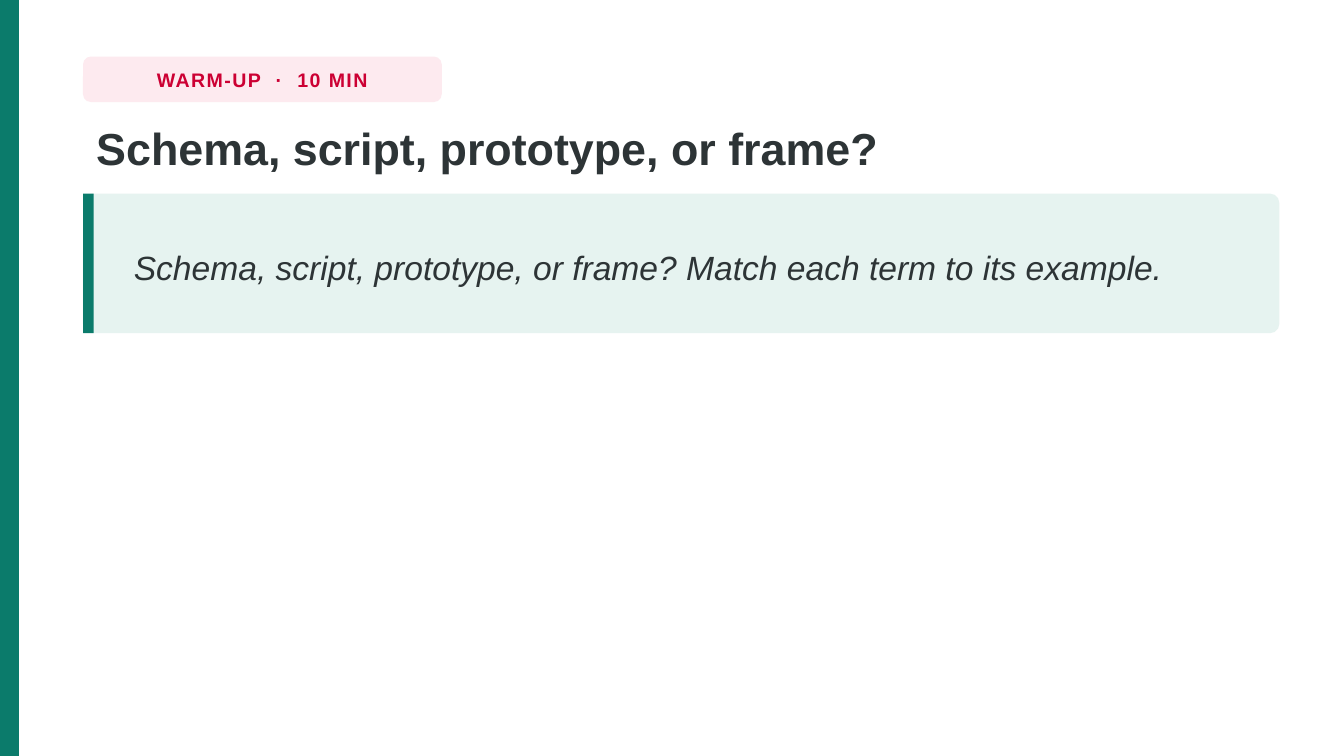
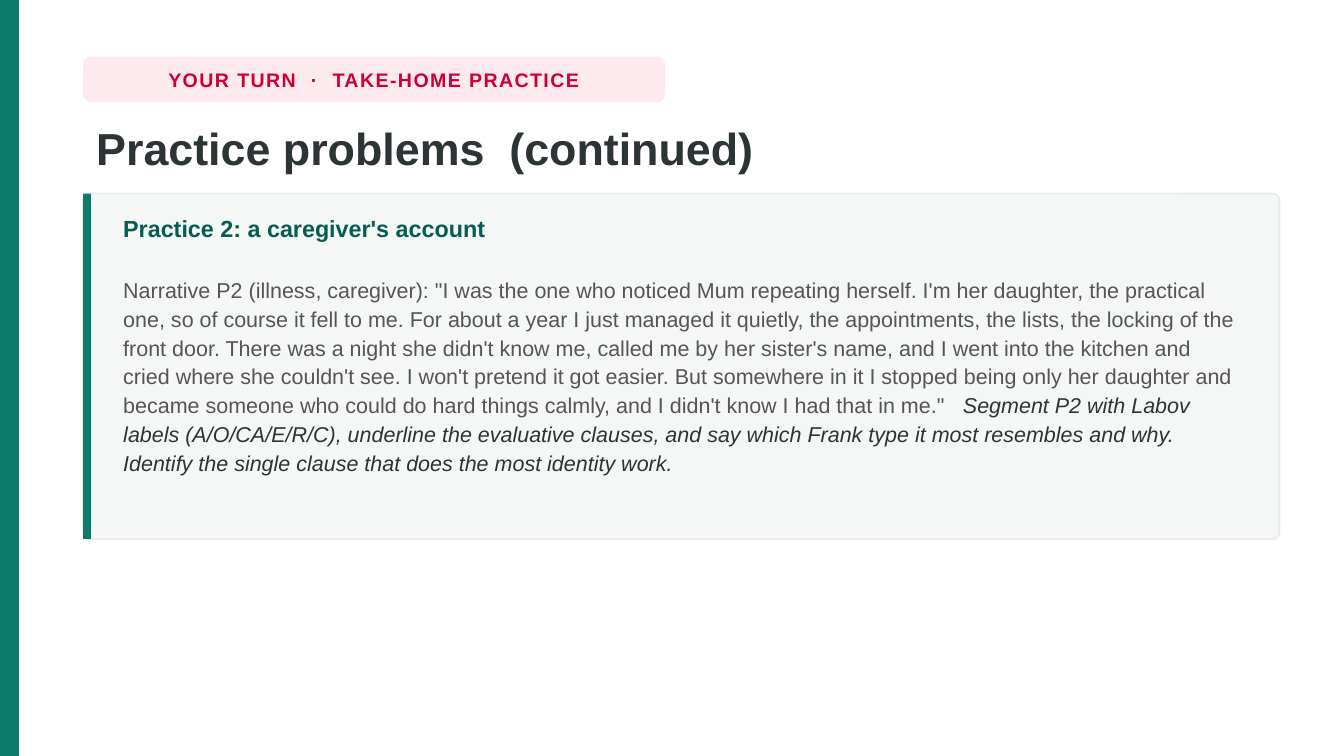
from dataclasses import dataclass

from pptx import Presentation
from pptx import util as u
from pptx.dml import color
from pptx.enum import shapes, text

FONT = "Arial"
GREEN, DARK_GREEN, MINT = "0B7B6B", "065C50", "E6F3F0"
RED, PINK = "CC0033", "FDEAEF"
INK, GREY, CARD, CARD_EDGE = "2D3436", "555555", "F4F7F6", "E8ECEE"
WIDTH, HEIGHT = 25.4, 14.29
LEFT, CONTENT_WIDTH, PANEL_TOP = 1.57, 22.61, 3.66


@dataclass
class Box:
    """A rectangle in centimetres."""
    left: float
    top: float
    width: float
    height: float

    def lengths(self):
        """Return the four sides as slide lengths."""
        return [u.Cm(side) for side in (self.left, self.top, self.width, self.height)]

    def inset(self, left, vertical, right):
        """Return the box reduced by the given margins."""
        return Box(self.left + left, self.top + vertical,
                   self.width - left - right, self.height - 2 * vertical)


def rgb(value):
    """Turn a hex string into a colour."""
    return color.RGBColor.from_string(value)


def add_block(slide, box, fill, radius=0, edge=None):
    """Draw a filled rectangle, rounded when a radius is given."""
    kind = shapes.MSO_SHAPE.ROUNDED_RECTANGLE if radius else shapes.MSO_SHAPE.RECTANGLE
    shape = slide.shapes.add_shape(kind, *box.lengths())
    shape.shadow.inherit = False
    shape.fill.solid()
    shape.fill.fore_color.rgb = rgb(fill)
    if radius:
        shape.adjustments[0] = radius / min(box.width, box.height)
    if edge:
        shape.line.color.rgb = rgb(edge)
        shape.line.width = u.Pt(1)
    else:
        shape.line.fill.background()


def add_text_frame(slide, box, anchor=text.MSO_ANCHOR.TOP, wrap=True):
    """Add a text box and return its frame."""
    frame = slide.shapes.add_textbox(*box.lengths()).text_frame
    frame.word_wrap = wrap
    frame.vertical_anchor = anchor
    return frame


def style(run, size, ink, bold=False, italic=False):
    """Set the look of a run."""
    font = run.font
    font.name, font.size = FONT, u.Pt(size)
    font.bold, font.italic = bold, italic
    font.color.rgb = rgb(ink)


def write(paragraph, words, size, ink, spacing=1.0, bold=False, italic=False):
    """Fill a paragraph with one styled run and return the run."""
    paragraph.text = words
    paragraph.line_spacing = spacing
    run = paragraph.runs[0]
    style(run, size, ink, bold, italic)
    return run


def add_badge(slide, box, label):
    """Draw the pink section badge."""
    add_block(slide, box, PINK, radius=0.15)
    frame = add_text_frame(slide, box, text.MSO_ANCHOR.MIDDLE, wrap=False)
    paragraph = frame.paragraphs[0]
    paragraph.alignment = text.PP_ALIGN.CENTER
    run = write(paragraph, label, 10.5, RED, bold=True)
    run._r.get_or_add_rPr().set("spc", "80")


def add_page(presentation, label, badge_width, title):
    """Add a slide with the side band, badge and title."""
    slide = presentation.slides.add_slide(presentation.slide_layouts[6])
    add_block(slide, Box(0, 0, 0.36, HEIGHT), GREEN)
    add_badge(slide, Box(LEFT, 1.07, badge_width, 0.86), label)
    frame = add_text_frame(slide, Box(LEFT, 2.13, CONTENT_WIDTH, 1.42))
    write(frame.paragraphs[0], title, 24, INK, 1.02, bold=True)
    return slide


def add_panel(slide, box, fill, radius, accent_width, edge=None):
    """Draw a rounded panel with a green accent on its left."""
    add_block(slide, box, fill, radius, edge)
    add_block(slide, Box(box.left, box.top, accent_width, box.height), GREEN)


def add_prompt(slide, box, words):
    """Draw the mint panel with an italic prompt."""
    add_panel(slide, box, MINT, 0.18, 0.2)
    frame = add_text_frame(slide, box.inset(0.71, 0.13, 0.69), text.MSO_ANCHOR.MIDDLE)
    write(frame.paragraphs[0], words, 18, INK, 1.16, italic=True)


def add_practice(slide, box, heading, narrative, task):
    """Draw the practice card with its heading, narrative and task."""
    add_panel(slide, box, CARD, 0.12, 0.15, CARD_EDGE)
    frame = add_text_frame(slide, box.inset(0.51, 0.2, 0.56))
    write(frame.paragraphs[0], heading, 12.5, DARK_GREEN, 1.12, bold=True)
    body = frame.add_paragraph()
    write(body, narrative, 11.5, GREY, 1.12)
    body.space_before = u.Pt(17)
    run = body.add_run()
    run.text = task
    style(run, 11.5, INK, italic=True)


def main():
    """Build and save the presentation."""
    presentation = Presentation()
    presentation.slide_width, presentation.slide_height = u.Cm(WIDTH), u.Cm(HEIGHT)

    warm_up = add_page(presentation, "WARM-UP  ·  10 MIN", 6.78,
                       "Schema, script, prototype, or frame?")
    add_prompt(warm_up, Box(LEFT, PANEL_TOP, CONTENT_WIDTH, 2.64),
               "Schema, script, prototype, or frame? Match each term to its example.")

    practice = add_page(presentation, "YOUR TURN  ·  TAKE-HOME PRACTICE", 11,
                        "Practice problems  (continued)")
    add_practice(
        practice, Box(LEFT, PANEL_TOP, CONTENT_WIDTH, 6.53),
        "Practice 2: a caregiver's account",
        "Narrative P2 (illness, caregiver): \"I was the one who noticed Mum repeating "
        "herself. I'm her daughter, the practical one, so of course it fell to me. For "
        "about a year I just managed it quietly, the appointments, the lists, the locking "
        "of the front door. There was a night she didn't know me, called me by her "
        "sister's name, and I went into the kitchen and cried where she couldn't see. I "
        "won't pretend it got easier. But somewhere in it I stopped being only her "
        "daughter and became someone who could do hard things calmly, and I didn't know "
        "I had that in me.\"   ",
        "Segment P2 with Labov labels (A/O/CA/E/R/C), underline the evaluative clauses, "
        "and say which Frank type it most resembles and why. Identify the single clause "
        "that does the most identity work.")
    presentation.save("out.pptx")


if __name__ == "__main__":
    main()
